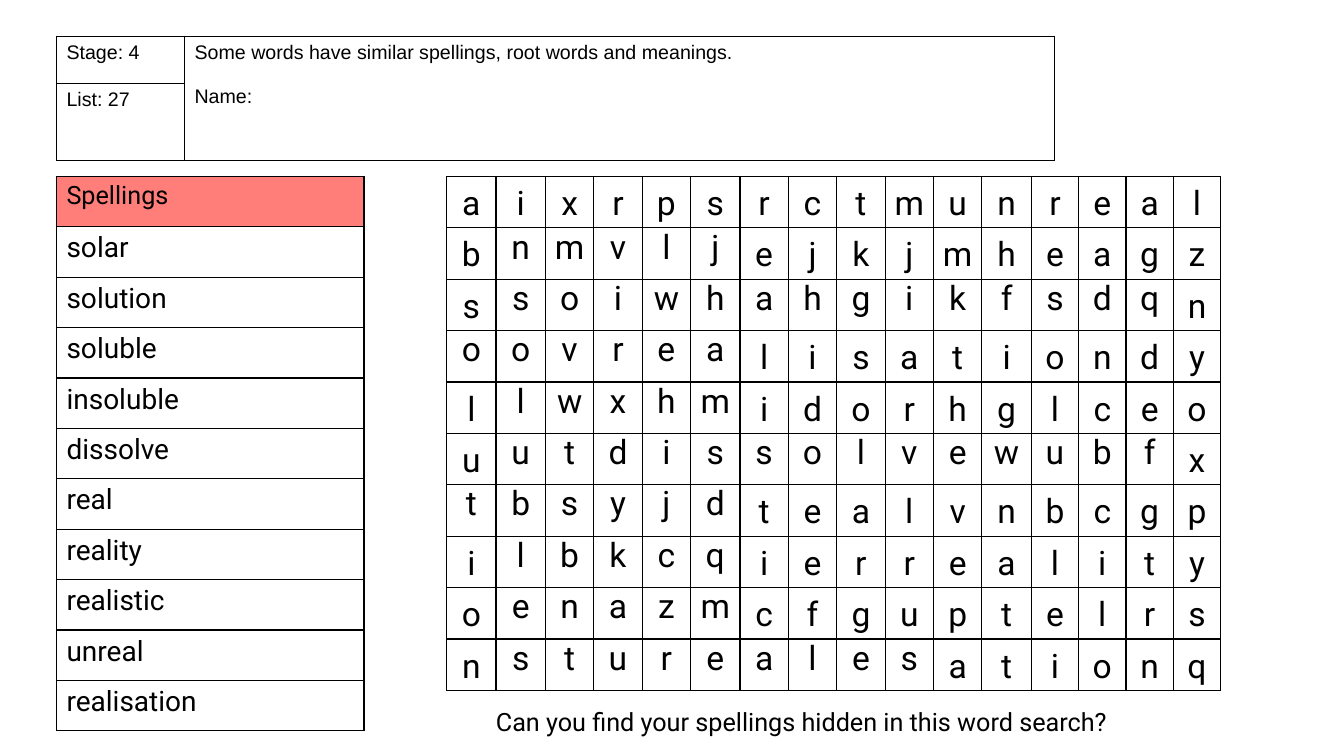
"""Build a spelling worksheet slide with a word list and a word search."""
from lxml import etree
from pptx import Presentation
from pptx.dml.color import RGBColor
from pptx.enum.text import PP_ALIGN
from pptx.oxml.ns import qn
from pptx.util import Inches, Pt

CENTER = PP_ALIGN.CENTER
LEFT = PP_ALIGN.LEFT

COLORS = {"ink": "000000", "heading": "FF7E79"}
HEADER = [
    ["Stage: 4", "Some words have similar spellings, root words and meanings."],
    ["List: 27", ""],
]
NAME_LABEL = "Name:"
SPELLINGS = ["Spellings", "solar", "solution", "soluble", "insoluble", "dissolve",
             "real", "reality", "realistic", "unreal", "realisation"]
# Each row gives its letters and the span of columns set with single spacing.
SEARCH = [
    ("aixrpsrctmunreal", (0, 0)),
    ("bnmvljejkjmheagz", (1, 6)),
    ("ssoiwhahgikfsdqn", (1, 15)),
    ("oovrealisationdy", (0, 6)),
    ("llwxhmidorhglceo", (1, 6)),
    ("uutdissolvewubfx", (1, 15)),
    ("tbsyjdtealvnbcgp", (0, 6)),
    ("ilbkcqierreality", (1, 6)),
    ("oenazmcfguptelrs", (1, 6)),
    ("nsturealesationq", (1, 10)),
]
QUESTION = "Can you find your spellings hidden in this word search?"

SLIDE_SIZE = (13.33, 7.5)
LEFT_EDGE, HEADER_TOP, BODY_TOP = 0.56, 0.36, 1.75
HEADER_COLUMNS, HEADER_ROW = [1.27, 8.63], 0.47
LIST_COLUMNS, LIST_ROW = [3.05], 0.5
SEARCH_LEFT, SEARCH_ROW = 4.43, 0.51
SEARCH_COLUMNS = [0.49] * 2 + [0.48] * 3 + [0.49] + [0.48] * 5 + [0.49] + [0.47] * 4
QUESTION_BOX = (4.82, 6.96, 8.66, 0.4)


def write(paragraph, text, size, font_name, align=LEFT):
    paragraph.alignment = align
    run = paragraph.add_run()
    run.text = text
    run.font.size = Pt(size)
    run.font.name = font_name
    run.font.color.rgb = RGBColor.from_string(COLORS["ink"])


def outline(cell):
    properties = cell._tc.get_or_add_tcPr()
    for index, side in enumerate(("a:lnL", "a:lnR", "a:lnT", "a:lnB")):
        line = etree.Element(qn(side), w=str(Pt(1)))
        fill = etree.SubElement(line, qn("a:solidFill"))
        etree.SubElement(fill, qn("a:srgbClr"), val=COLORS["ink"])
        properties.insert(index, line)


def add_grid(slide, left, top, columns, row_height, row_count):
    frame = slide.shapes.add_table(
        row_count, len(columns), Inches(left), Inches(top),
        Inches(sum(columns)), Inches(row_height * row_count))
    table = frame.table
    table.first_row = table.horz_banding = False
    for column, width in zip(table.columns, columns):
        column.width = Inches(width)
    for row in table.rows:
        row.height = Inches(row_height)
    for cell in table.iter_cells():
        cell.fill.background()
        outline(cell)
    return table


def add_header(slide):
    table = add_grid(slide, LEFT_EDGE, HEADER_TOP, HEADER_COLUMNS, HEADER_ROW, len(HEADER))
    table.cell(0, 1).merge(table.cell(1, 1))
    for row, texts in enumerate(HEADER):
        for column, text in enumerate(texts):
            if text:
                write(table.cell(row, column).text_frame.paragraphs[0], text, 14, "Arial")
    name_line = table.cell(0, 1).text_frame.add_paragraph()
    name_line.space_before = Pt(16)
    write(name_line, NAME_LABEL, 14, "Arial")


def add_spellings(slide):
    table = add_grid(slide, LEFT_EDGE, BODY_TOP, LIST_COLUMNS, LIST_ROW, len(SPELLINGS))
    for row, word in enumerate(SPELLINGS):
        size = 20 if row else 18
        write(table.cell(row, 0).text_frame.paragraphs[0], word, size, "Roboto")
    heading = table.cell(0, 0)
    heading.fill.solid()
    heading.fill.fore_color.rgb = RGBColor.from_string(COLORS["heading"])


def add_search(slide):
    table = add_grid(slide, SEARCH_LEFT, BODY_TOP, SEARCH_COLUMNS, SEARCH_ROW, len(SEARCH))
    for row, (letters, single_spaced) in enumerate(SEARCH):
        for column, letter in enumerate(letters):
            cell = table.cell(row, column)
            cell.margin_left = cell.margin_right = Inches(0.07)
            cell.margin_top = cell.margin_bottom = 0
            paragraph = cell.text_frame.paragraphs[0]
            if column not in range(*single_spaced):
                paragraph.line_spacing = 1.2
                paragraph.space_after = Pt(10)
            write(paragraph, letter, 24, "Roboto", CENTER)


def add_question(slide):
    box = slide.shapes.add_textbox(*map(Inches, QUESTION_BOX))
    box.text_frame.word_wrap = True
    write(box.text_frame.paragraphs[0], QUESTION, 18, "Roboto")


def main():
    presentation = Presentation()
    presentation.slide_width, presentation.slide_height = map(Inches, SLIDE_SIZE)
    slide = presentation.slides.add_slide(presentation.slide_layouts[6])
    add_spellings(slide)
    add_header(slide)
    add_search(slide)
    add_question(slide)
    presentation.save("out.pptx")


if __name__ == "__main__":
    main()
